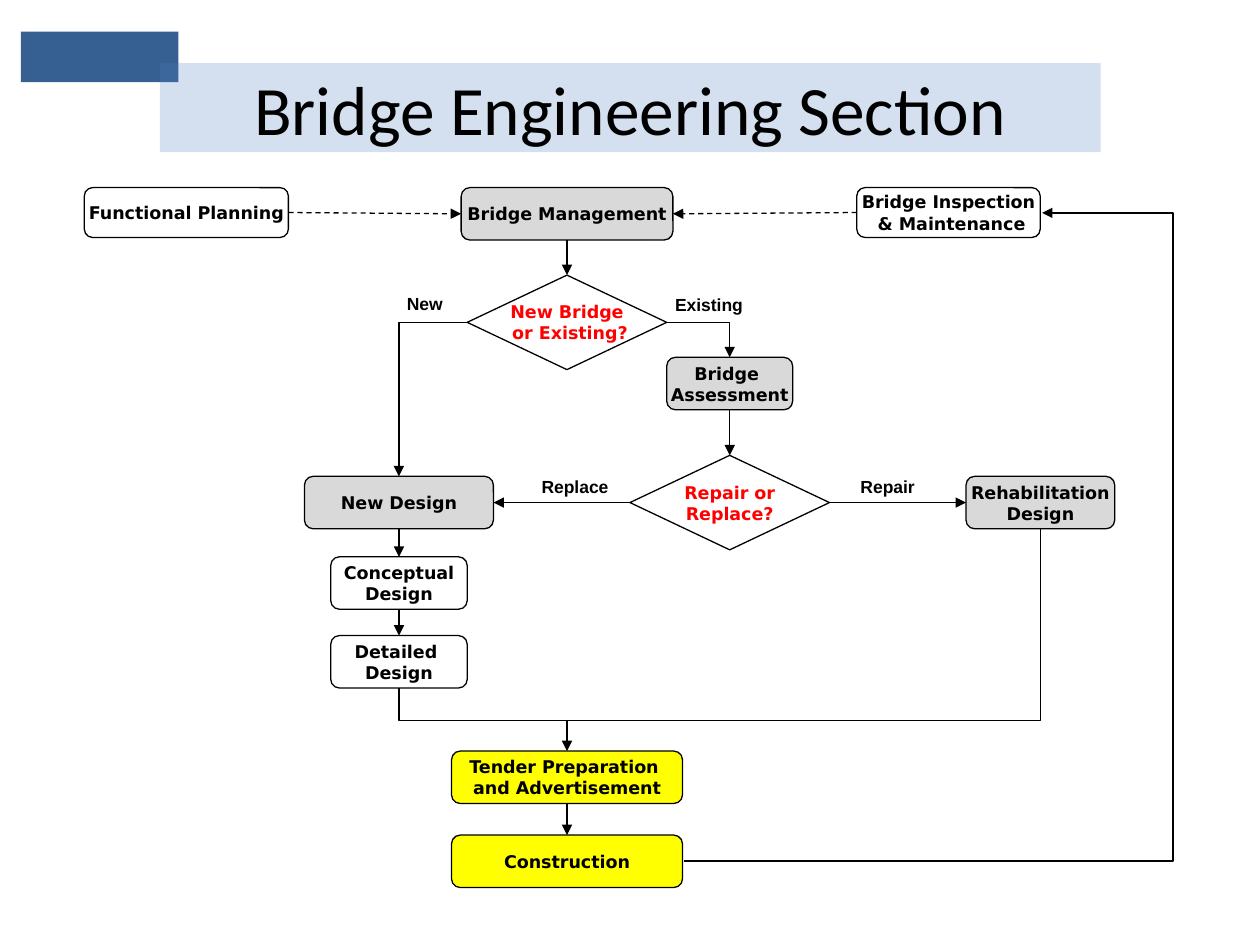
import copy
from dataclasses import dataclass

import pptx
import pptx.dml.color
import pptx.enum.dml
import pptx.enum.shapes
import pptx.enum.text
import pptx.oxml
import pptx.oxml.ns
import pptx.util

Pt = pptx.util.Pt
qn = pptx.oxml.ns.qn
SHAPE = pptx.enum.shapes.MSO_SHAPE
LINK = pptx.enum.shapes.MSO_CONNECTOR
ALIGN = pptx.enum.text.PP_ALIGN
ANCHOR = pptx.enum.text.MSO_ANCHOR
AUTO_SIZE = pptx.enum.text.MSO_AUTO_SIZE
TOP, LEFT, BOTTOM, RIGHT = range(4)


@dataclass(frozen=True)
class Theme:
    ink: str = "000000"
    question: str = "FF0000"
    plain: str = "FFFFFF"
    section: str = "D9D9D9"
    delivery: str = "FFFF00"
    accent: str = "376092"
    title_fill: str = "4F81BD"
    title_font: str = "Calibri"
    node_font: str = "DejaVu Sans"
    label_font: str = "Arial"
    title_size: float = 39.6
    text_size: float = 10
    link_width: float = 0.75
    route_width: float = 1


THEME = Theme()


def rgb(value):
    return pptx.dml.color.RGBColor.from_string(value)


def fill_shape(shape, color):
    shape.fill.solid()
    shape.fill.fore_color.rgb = rgb(color)


def write(frame, text, *, font, size, color=THEME.ink, bold=False,
          align=ALIGN.CENTER, wrap=False):
    """Newlines start paragraphs; vertical tabs break lines within one."""
    frame.text = text
    frame.word_wrap = wrap
    for paragraph in frame.paragraphs:
        paragraph.alignment = align
        for run in paragraph.runs:
            run.font.name = font
            run.font.size = Pt(size)
            run.font.bold = bold
            run.font.color.rgb = rgb(color)
        for line_break in paragraph._p.findall(qn("a:br")):
            line_break.insert(0, copy.deepcopy(paragraph.runs[0]._r.rPr))


def style_line(shape, width, arrow=True):
    shape.line.color.rgb = rgb(THEME.ink)
    shape.line.width = Pt(width)
    if arrow:
        tail = pptx.oxml.parse_xml(
            f'<a:tailEnd {pptx.oxml.ns.nsdecls("a")} type="triangle"/>')
        shape.line._get_or_add_ln().append(tail)


def add_node(slide, box, text, center, top, width, height=30,
             fill=THEME.plain, color=THEME.ink, kind=SHAPE.ROUNDED_RECTANGLE):
    node = slide.shapes.add_shape(
        kind, Pt(box[0] + center - width / 2), Pt(box[1] + top),
        Pt(width), Pt(height))
    node.shadow.inherit = False
    fill_shape(node, fill)
    style_line(node, THEME.link_width, arrow=False)
    node.text_frame.vertical_anchor = ANCHOR.MIDDLE
    write(node.text_frame, text, font=THEME.node_font, size=THEME.text_size,
          color=color, bold=True)
    return node


def add_question(slide, box, text, center, top):
    return add_node(slide, box, text, center, top, 114, 54,
                    color=THEME.question, kind=SHAPE.FLOWCHART_DECISION)


def connect(slide, start, start_side, end, end_side, bent=False, dashed=False):
    kind = LINK.ELBOW if bent else LINK.STRAIGHT
    link = slide.shapes.add_connector(kind, 0, 0, 0, 0)
    link.begin_connect(start, start_side)
    link.end_connect(end, end_side)
    if bent:  # a single corner: across, then down
        link._element.spPr.find(qn("a:prstGeom")).set("prst", "bentConnector2")
    if dashed:
        link.line.dash_style = pptx.enum.dml.MSO_LINE.DASH
    style_line(link, THEME.link_width)
    link._element.spPr.append(pptx.oxml.parse_xml(
        f'<a:effectLst {pptx.oxml.ns.nsdecls("a")}/>'))


def add_route(slide, box, points, arrow=True):
    start, *rest = [(Pt(box[0] + x), Pt(box[1] + y)) for x, y in points]
    builder = slide.shapes.build_freeform(*start)
    builder.add_line_segments(rest, close=False)
    route = builder.convert_to_shape()
    route.shadow.inherit = False
    route.fill.background()
    style_line(route, THEME.route_width, arrow)


def add_label(slide, box, text, left, top, width):
    label = slide.shapes.add_textbox(
        Pt(box[0] + left), Pt(box[1] + top), Pt(width), Pt(19.4))
    write(label.text_frame, text, font=THEME.label_font, size=THEME.text_size,
          bold=True, align=ALIGN.LEFT)
    label.text_frame.auto_size = AUTO_SIZE.SHAPE_TO_FIT_TEXT


def add_header(slide, box):
    left, top, width, height = box
    # Accent block, behind the title band
    accent = slide.shapes.add_shape(
        SHAPE.RECTANGLE, Pt(left), Pt(top), Pt(90), Pt(29))
    accent.shadow.inherit = False
    fill_shape(accent, THEME.accent)
    accent.line.fill.background()
    slide.shapes._spTree.insert(2, accent._element)

    # Translucent title band
    title = slide.shapes.title
    title.left, title.top = Pt(left + 79.3), Pt(top + 18)
    title.width, title.height = Pt(width - 79.3), Pt(height - 18)
    fill_shape(title, THEME.title_fill)
    color = title.fill._xPr.find(qn("a:solidFill"))[0]
    color.append(pptx.oxml.parse_xml(
        f'<a:alpha {pptx.oxml.ns.nsdecls("a")} val="24000"/>'))
    title.text_frame.vertical_anchor = ANCHOR.MIDDLE
    title.text_frame.auto_size = AUTO_SIZE.NONE
    write(title.text_frame, "Bridge Engineering Section",
          font=THEME.title_font, size=THEME.title_size, wrap=True)


def add_flowchart(slide, box):
    # Column centres
    design_x, main_x, assess_x, inspect_x, rehab_x = 180, 276, 369, 494, 546.5
    return_x, merge_y = box[2], 304.5

    # Steps and decisions
    planning = add_node(slide, box, "Functional Planning", 58.5, 0, 116.6, 28.5)
    management = add_node(slide, box, "Bridge Management", main_x, 0, 121,
                          fill=THEME.section)
    inspection = add_node(slide, box, "Bridge Inspection\n & Maintenance",
                          inspect_x, 0, 104.8, 28.5)
    new_or_existing = add_question(
        slide, box, "New Bridge\v or Existing?", main_x, 50)
    assessment = add_node(slide, box, "Bridge \vAssessment", assess_x, 97, 72,
                          fill=THEME.section)
    repair_or_replace = add_question(
        slide, box, "Repair or\vReplace?", assess_x, 153)
    new_design = add_node(slide, box, "New Design", design_x, 165, 108,
                          fill=THEME.section)
    rehabilitation = add_node(slide, box, "Rehabilitation\nDesign", rehab_x,
                              165, 85, fill=THEME.section)
    conceptual = add_node(slide, box, "Conceptual\nDesign", design_x, 211, 78)
    detailed = add_node(slide, box, "Detailed \vDesign", design_x, 256, 78)
    tender = add_node(slide, box, "Tender Preparation \nand Advertisement",
                      main_x, 322, 132, fill=THEME.delivery)
    construction = add_node(slide, box, "Construction", main_x, 370, 132,
                            fill=THEME.delivery)

    # Inputs to management
    connect(slide, planning, RIGHT, management, LEFT, dashed=True)
    connect(slide, inspection, LEFT, management, RIGHT, dashed=True)

    # Downward steps
    for upper, lower in ((management, new_or_existing),
                         (assessment, repair_or_replace),
                         (new_design, conceptual),
                         (conceptual, detailed),
                         (tender, construction)):
        connect(slide, upper, BOTTOM, lower, TOP)

    # Decision branches
    connect(slide, new_or_existing, LEFT, new_design, TOP, bent=True)
    connect(slide, new_or_existing, RIGHT, assessment, TOP, bent=True)
    connect(slide, repair_or_replace, LEFT, new_design, RIGHT)
    connect(slide, repair_or_replace, RIGHT, rehabilitation, LEFT)
    for text, left, top, width in (("New", 177.4, 56.5, 35.3),
                                   ("Existing", 330.7, 57, 53.3),
                                   ("Replace", 254.4, 161, 53.3),
                                   ("Repair", 436.6, 161, 46)):
        add_label(slide, box, text, left, top, width)

    # Both designs merge into the tender; construction returns to inspection
    add_route(slide, box, [(main_x, merge_y), (rehab_x, merge_y),
                           (rehab_x, 195)], arrow=False)
    add_route(slide, box, [(design_x, 286), (design_x, merge_y),
                           (main_x, merge_y), (main_x, 322)])
    add_route(slide, box, [(main_x + 67, 385), (return_x, 385),
                           (return_x, 14.5), (inspect_x + 53.5, 14.5)])


def main():
    deck = pptx.Presentation()
    deck.slide_width, deck.slide_height = Pt(720), Pt(540)
    slide = deck.slides.add_slide(deck.slide_layouts.get_by_name("Title Only"))
    add_header(slide, (12, 18, 617, 69))
    add_flowchart(slide, (48, 107.2, 622.5, 400))
    deck.save("out.pptx")


if __name__ == "__main__":
    main()
